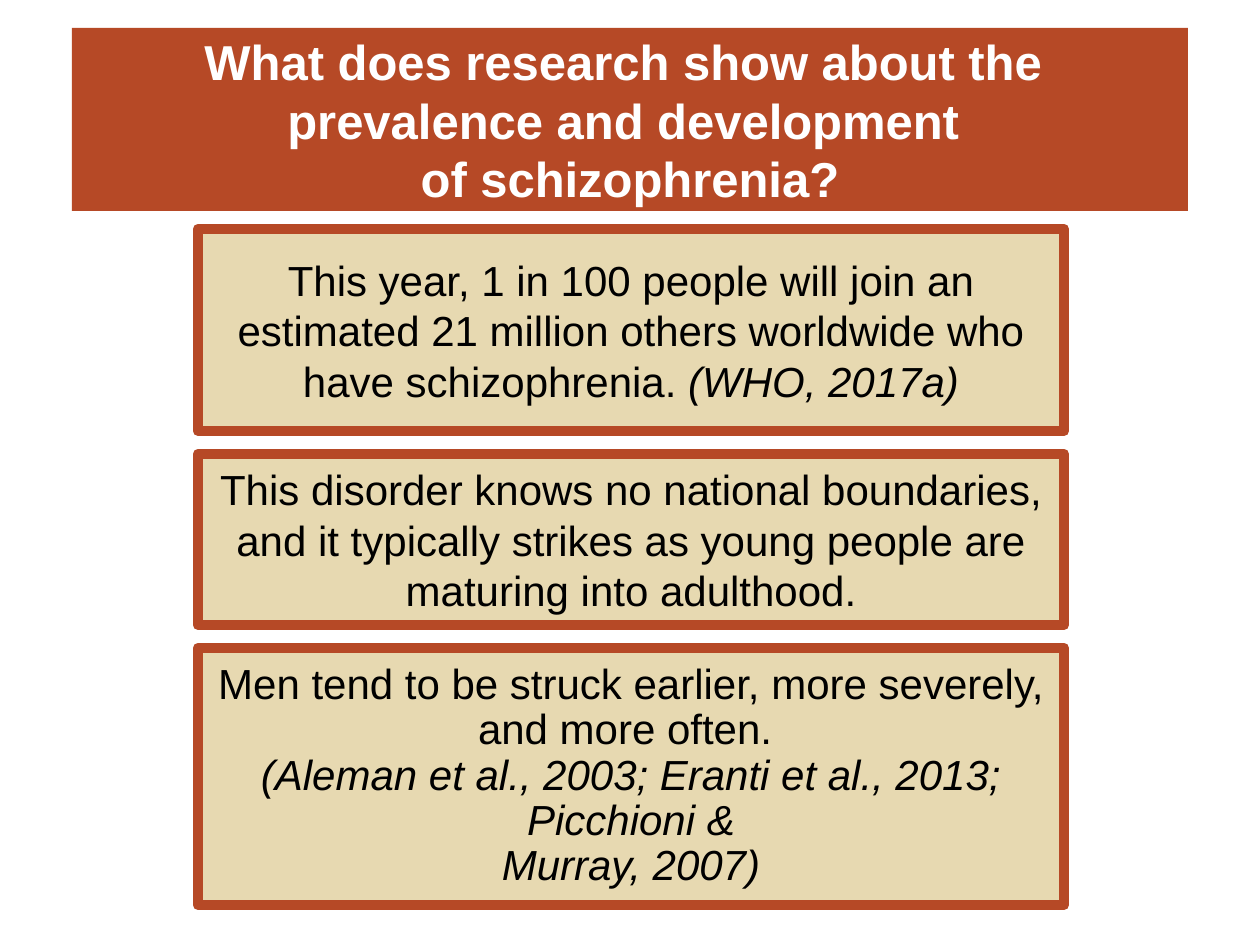
from dataclasses import dataclass

from pptx import Presentation
from pptx import util as u
from pptx.dml.color import RGBColor
from pptx.enum import shapes, text

EMU_PER_PX = 914400 // 126


@dataclass(frozen=True)
class Theme:
    font: str = "Arial"
    rust: RGBColor = RGBColor(0xB6, 0x49, 0x26)
    sand: RGBColor = RGBColor(0xE7, 0xD9, 0xB1)
    white: RGBColor = RGBColor(0xFF, 0xFF, 0xFF)
    black: RGBColor = RGBColor(0, 0, 0)
    title_size: int = 28
    body_size: int = 24
    border: int = 6


THEME = Theme()

TITLE_LINES = (
    "What does research show about the ",
    "prevalence and development ",
    "of schizophrenia?",
)

CARD_LEFT, CARD_WIDTH = 198, 866
FIRST_CARD_TOP, CARD_GAP = 229, 23

# Each card: height, line spacing, paragraphs of (words, italic) runs
CARDS = (
    (202, 1.0, (
        (("This year, 1 in 100 people will join an estimated 21 million "
          "others worldwide who", False),),
        (("have schizophrenia. ", False), ("(WHO, 2017a)", True)),
    )),
    (171, 1.0, (
        (("This disorder knows no national boundaries, and it typically "
          "strikes as young people are maturing into adulthood.", False),),
    )),
    (257, 0.9, (
        (("Men tend to be struck earlier, more severely, and more often. ",
          False),),
        (("(Aleman et al., 2003; Eranti et al., 2013; Picchioni &", True),),
        (("Murray, 2007)", True),),
    )),
)


def px(length):
    return u.Emu(length * EMU_PER_PX)


def add_box(slide, left, top, width, height, fill, border=None):
    """Add a flat rectangle, ready for centred, wrapped text."""
    shape = slide.shapes.add_shape(
        shapes.MSO_SHAPE.RECTANGLE, px(left), px(top), px(width), px(height))
    shape.shadow.inherit = False
    shape.fill.solid()
    shape.fill.fore_color.rgb = fill
    if border is None:
        shape.line.fill.background()
    else:
        shape.line.color.rgb = border
        shape.line.width = u.Pt(THEME.border)
    shape.text_frame.word_wrap = True
    shape.text_frame.vertical_anchor = text.MSO_ANCHOR.MIDDLE
    return shape


def add_run(paragraph, words, size, color, bold=False, italic=False):
    run = paragraph.add_run()
    run.text = words
    run.font.name = THEME.font
    run.font.size = u.Pt(size)
    run.font.color.rgb = color
    run.font.bold = bold
    run.font.italic = italic


def add_title(slide):
    shape = add_box(slide, 72, 28, 1116, 183, THEME.rust)
    paragraph = shape.text_frame.paragraphs[0]
    paragraph.alignment = text.PP_ALIGN.CENTER
    for index, line in enumerate(TITLE_LINES):
        if index:
            paragraph.add_line_break()
        add_run(paragraph, line, THEME.title_size, THEME.white, bold=True)


def add_card(slide, top, height, line_spacing, paragraphs):
    shape = add_box(slide, CARD_LEFT, top, CARD_WIDTH, height,
                    THEME.sand, THEME.rust)
    frame = shape.text_frame
    for index, runs in enumerate(paragraphs):
        paragraph = frame.add_paragraph() if index else frame.paragraphs[0]
        paragraph.alignment = text.PP_ALIGN.CENTER
        paragraph.line_spacing = line_spacing
        for words, italic in runs:
            add_run(paragraph, words, THEME.body_size, THEME.black,
                    italic=italic)


def main():
    presentation = Presentation()
    presentation.slide_width = u.Inches(10)
    presentation.slide_height = u.Inches(7.5)
    slide = presentation.slides.add_slide(presentation.slide_layouts[6])

    # Title band
    add_title(slide)

    # Stack of bordered cards
    top = FIRST_CARD_TOP
    for height, line_spacing, paragraphs in CARDS:
        add_card(slide, top, height, line_spacing, paragraphs)
        top += height + CARD_GAP

    presentation.save("out.pptx")


if __name__ == "__main__":
    main()
